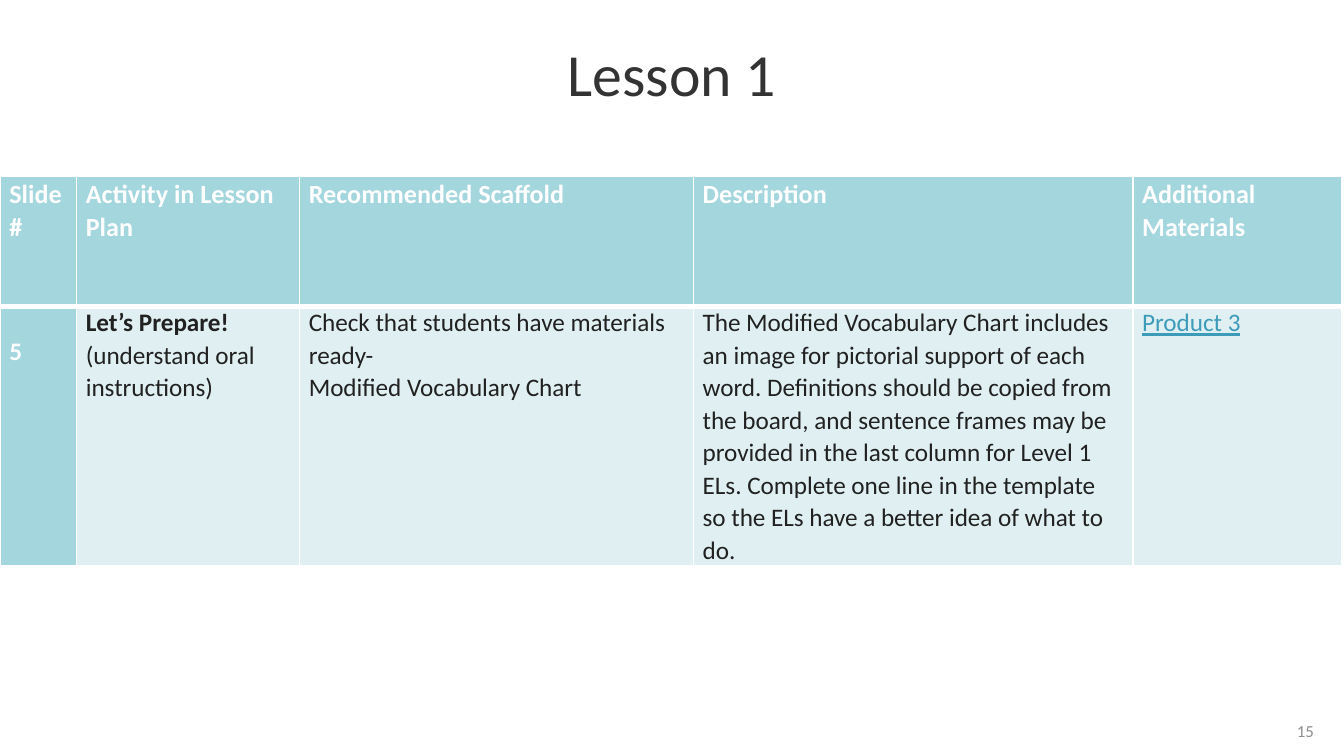
from lxml import etree
from pptx import Presentation
from pptx.dml.color import RGBColor
from pptx.enum.text import MSO_ANCHOR, PP_ALIGN
from pptx.oxml.ns import qn
from pptx.util import Pt

CENTER, RIGHT = PP_ALIGN.CENTER, PP_ALIGN.RIGHT
MIDDLE, TOP = MSO_ANCHOR.MIDDLE, MSO_ANCHOR.TOP

WHITE = RGBColor(0xFF, 0xFF, 0xFF)
TEAL = RGBColor(0xA3, 0xD6, 0xDD)
PALE = RGBColor(0xE0, 0xF0, 0xF2)
INK = RGBColor(0x21, 0x21, 0x21)
LINK = RGBColor(0x3D, 0x9B, 0xBA)
TITLE_GRAY = RGBColor(0x33, 0x33, 0x33)
NUMBER_GRAY = RGBColor(0x8D, 0x8D, 0x8D)
FONT = "Calibri"

# Content: each cell is a list of paragraphs, each paragraph a list of spans
TITLE = "Lesson 1"
PAGE_NUMBER = "15"
HEADERS = ["Slide #", "Activity in Lesson Plan", "Recommended Scaffold",
           "Description", "Additional Materials"]
LESSON = [
    [["5"]],
    [["Let’s Prepare!", " (understand oral instructions)"]],
    [["Check that students have materials ready-"], ["Modified Vocabulary Chart"]],
    [["The Modified Vocabulary Chart includes an image for pictorial support of "
      "each word. Definitions should be copied from the board, and sentence "
      "frames may be provided in the last column for Level 1 ELs. Complete one "
      "line in the template so the ELs have a better idea of what to do."]],
    [["Product 3"]],
]
ROWS = [[[[header]] for header in HEADERS], LESSON]
COLUMN_WIDTHS = [41, 119.5, 211, 235.5, 112]
ROW_HEIGHTS = [69.5, 139]
TABLE_TOP = 94.5


def style(span, size, color, bold=False):
    span.font.name = FONT
    span.font.size = Pt(size)
    span.font.bold = bold
    span.font.color.rgb = color


def add_borders(cell, widths):
    """Draw white borders, given a width for each side."""
    properties = cell._tc.get_or_add_tcPr()
    for side, width in widths.items():
        line = etree.SubElement(properties, qn(f"a:ln{side}"), w=str(Pt(width)))
        fill = etree.SubElement(line, qn("a:solidFill"))
        etree.SubElement(fill, qn("a:srgbClr"), val=str(WHITE))


def fill_cell(cell, paragraphs, row, column):
    is_header = row == 0
    is_label = is_header or column == 0
    add_borders(cell, {"L": 1, "R": 1, "T": 1 if is_header else 3,
                       "B": 3 if is_header else 1})
    cell.fill.solid()
    cell.fill.fore_color.rgb = TEAL if is_label else PALE
    cell.margin_left = cell.margin_right = Pt(5)
    cell.margin_top = cell.margin_bottom = 0
    cell.vertical_anchor = TOP
    for index, spans in enumerate(paragraphs):
        frame = cell.text_frame
        para = frame.add_paragraph() if index else frame.paragraphs[0]
        para.line_spacing = 2 if is_label and not is_header else 1.06
        for position, text in enumerate(spans):
            span = para.add_run()
            span.text = text
            is_lead = len(spans) > 1 and position == 0
            style(span, 14 if is_header else 13.5, WHITE if is_label else INK,
                  bold=is_label or is_lead)


deck = Presentation()
deck.slide_width, deck.slide_height = Pt(720), Pt(405)
page = deck.slides.add_slide(deck.slide_layouts[5])

# Title
title = page.shapes.title
title.left, title.top, title.width, title.height = 0, 0, deck.slide_width, Pt(83)
title.text_frame.text = TITLE
title.text_frame.vertical_anchor = MIDDLE
para = title.text_frame.paragraphs[0]
para.alignment = CENTER
para.line_spacing = 0.9
style(para.runs[0], 32, TITLE_GRAY)

# Lesson table
table = page.shapes.add_table(len(ROWS), len(HEADERS), 0, Pt(TABLE_TOP),
                              Pt(sum(COLUMN_WIDTHS)), Pt(sum(ROW_HEIGHTS))).table
for column, width in zip(table.columns, COLUMN_WIDTHS):
    column.width = Pt(width)
for row, height in zip(table.rows, ROW_HEIGHTS):
    row.height = Pt(height)
for row_index, cells in enumerate(ROWS):
    for column_index, paragraphs in enumerate(cells):
        fill_cell(table.cell(row_index, column_index), paragraphs,
                  row_index, column_index)

# Product reference, styled as a link
product = table.cell(1, 4).text_frame.paragraphs[0].runs[0]
product.font.color.rgb = LINK
product.font.underline = True

# Page number
box = page.shapes.add_textbox(Pt(535.5), Pt(378), Pt(175.5), Pt(27.5))
box.text_frame.word_wrap = True
box.text_frame.vertical_anchor = MIDDLE
box.text_frame.text = PAGE_NUMBER
para = box.text_frame.paragraphs[0]
para.alignment = RIGHT
style(para.runs[0], 9, NUMBER_GRAY)

deck.save("out.pptx")
